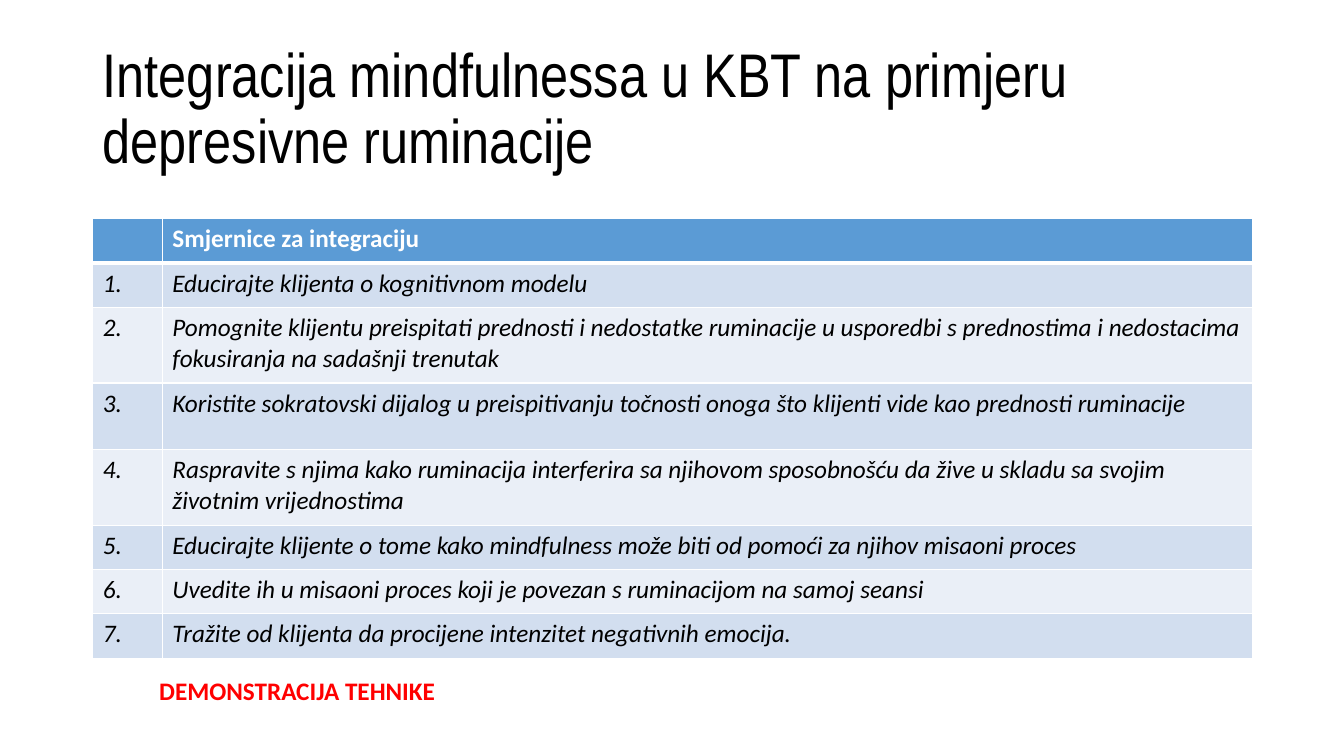
from lxml import etree
from pptx import Presentation
from pptx.dml.color import RGBColor
from pptx.enum.text import MSO_ANCHOR
from pptx.oxml.ns import qn
from pptx.util import Inches, Pt

BLACK, WHITE, RED = "000000", "FFFFFF", "FF0000"
HEADER_BLUE = "5B9BD5"
BANDS = ("D2DEEF", "EAEFF7")
COLUMN_WIDTHS = (0.69, 10.81)
ROW_HEIGHTS = (0.44, 0.44, 0.75, 0.66, 0.75, 0.44, 0.44, 0.44)

GUIDELINES = (
    "Educirajte klijenta o kognitivnom modelu",
    "Pomognite klijentu preispitati prednosti i nedostatke ruminacije u usporedbi "
    "s prednostima i nedostacima fokusiranja na sadašnji trenutak",
    "Koristite sokratovski dijalog u preispitivanju točnosti onoga što klijenti vide "
    "kao prednosti ruminacije",
    "Raspravite s njima kako ruminacija interferira sa njihovom sposobnošću da žive "
    "u skladu sa svojim životnim vrijednostima",
    "Educirajte klijente o tome kako mindfulness može biti od pomoći za njihov misaoni proces",
    "Uvedite ih u misaoni proces koji je povezan s ruminacijom na samoj seansi",
    "Tražite od klijenta da procijene intenzitet negativnih emocija.",
)


def rgb(color):
    return RGBColor.from_string(color)


def add_run(paragraph, text, color, size=18, font="Calibri", bold=False, italic=False):
    run = paragraph.add_run()
    run.text = text
    run.font.name = font
    run.font.size = Pt(size)
    run.font.bold = bold
    run.font.italic = italic
    run.font.color.rgb = rgb(color)


def add_text(slide, left, top, width, height, anchor=MSO_ANCHOR.TOP):
    """Add a wrapping text box and return its first paragraph."""
    frame = slide.shapes.add_textbox(
        Inches(left), Inches(top), Inches(width), Inches(height)).text_frame
    frame.word_wrap = True
    frame.vertical_anchor = anchor
    return frame.paragraphs[0]


def set_borders(cell, **widths):
    """Draw white borders; widths in points are keyed L, R, T, B in schema order."""
    properties = cell._tc.get_or_add_tcPr()
    for position, (side, width) in enumerate(widths.items()):
        line = etree.Element(qn(f"a:ln{side}"), w=str(Pt(width)))
        fill = etree.SubElement(line, qn("a:solidFill"))
        etree.SubElement(fill, qn("a:srgbClr"), val=WHITE)
        properties.insert(position, line)


def add_guidelines_table(slide):
    rows = [("", "Smjernice za integraciju")]
    rows += [(f"{number}.", text) for number, text in enumerate(GUIDELINES, 1)]
    table = slide.shapes.add_table(
        len(rows), len(COLUMN_WIDTHS), Inches(0.92), Inches(2.17),
        Inches(sum(COLUMN_WIDTHS)), Inches(sum(ROW_HEIGHTS))).table
    for column, width in zip(table.columns, COLUMN_WIDTHS):
        column.width = Inches(width)
    for index, (row, height, texts) in enumerate(zip(table.rows, ROW_HEIGHTS, rows)):
        row.height = Inches(height)
        header = index == 0
        for cell, text in zip(row.cells, texts):
            cell.fill.solid()
            cell.fill.fore_color.rgb = rgb(HEADER_BLUE if header else BANDS[(index - 1) % 2])
            set_borders(cell, L=1, R=1, T=3 if index == 1 else 1, B=3 if header else 1)
            if text:
                add_run(cell.text_frame.paragraphs[0], text, WHITE if header else BLACK,
                        bold=header, italic=not header)


def main():
    presentation = Presentation()
    presentation.slide_width = Inches(13.33)
    presentation.slide_height = Inches(7.5)
    slide = presentation.slides.add_slide(presentation.slide_layouts[6])

    title = add_text(slide, 0.92, 0.37, 11.5, 1.45, MSO_ANCHOR.MIDDLE)
    title.line_spacing = 0.9
    add_run(title, "Integracija mindfulnessa u KBT na primjeru depresivne ruminacije",
            BLACK, size=44, font="Arial Narrow")

    add_guidelines_table(slide)

    demonstration = add_text(slide, 1.48, 6.65, 3.61, 0.4)
    add_run(demonstration, "DEMONSTRACIJA TEHNIKE", RED, bold=True)

    presentation.save("out.pptx")


if __name__ == "__main__":
    main()
